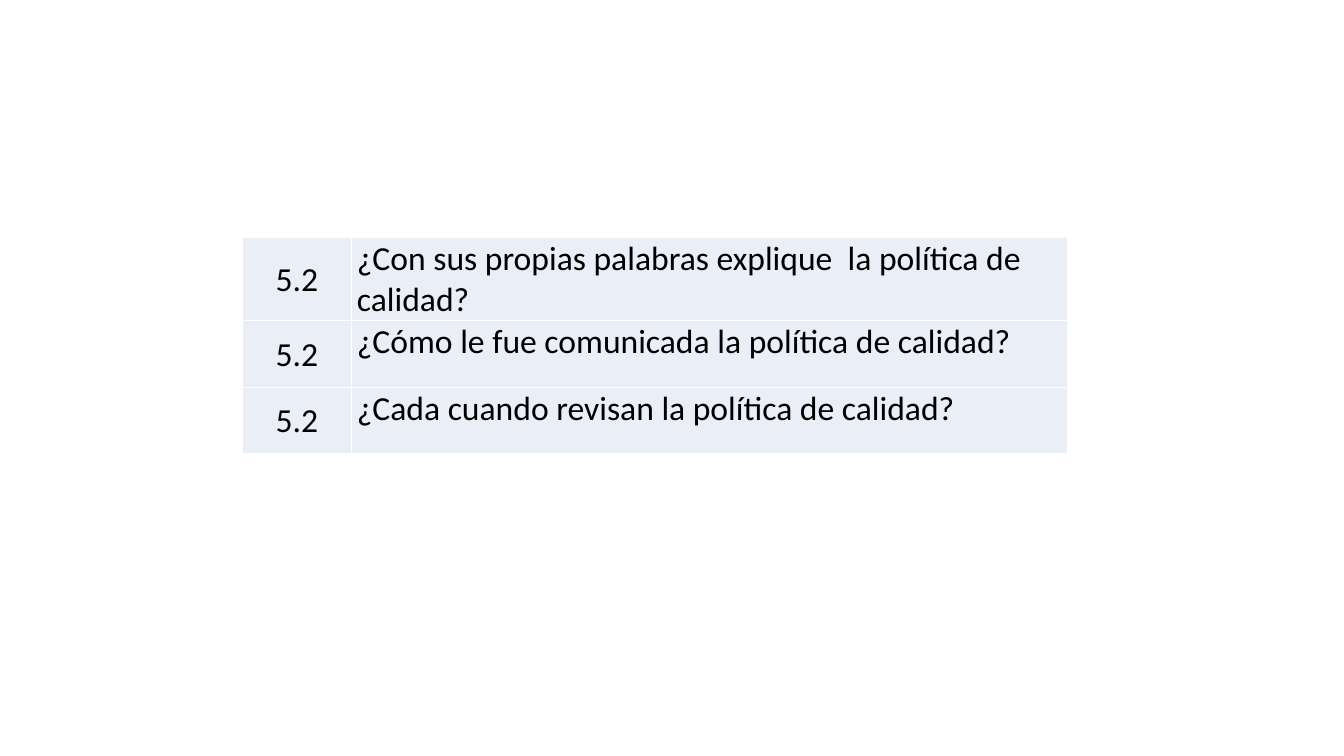
from lxml import etree
from pptx import Presentation
from pptx.dml.color import RGBColor
from pptx.enum.text import MSO_ANCHOR, PP_ALIGN
from pptx.oxml.ns import qn
from pptx.util import Inches, Pt

MIDDLE, TOP = MSO_ANCHOR.MIDDLE, MSO_ANCHOR.TOP
CENTER, LEFT = PP_ALIGN.CENTER, PP_ALIGN.LEFT

# Content
QUESTIONS = [
    ("5.2", "¿Con sus propias palabras explique  la política de calidad?"),
    ("5.2", "¿Cómo le fue comunicada la política de calidad?"),
    ("5.2", "¿Cada cuando revisan la política de calidad?"),
]
COLORS = {"text": "000000", "cell": "EAEFF7", "border": "FFFFFF"}
FONT = {"name": "Calibri", "size": Pt(24)}
MARGINS = {"margin_left": Inches(0.05), "margin_right": Inches(0.05),
           "margin_top": Inches(0.01), "margin_bottom": 0}

# Layout
COLUMNS = [(1.09, CENTER, MIDDLE), (7.1, LEFT, TOP)]  # width, align, anchor
TABLE_LEFT, TABLE_TOP, ROW_HEIGHT = 2.4, 2.36, 0.66


def set_attrs(obj, values):
    for name, value in values.items():
        setattr(obj, name, value)


def add_borders(cell):
    tc_pr = cell._tc.get_or_add_tcPr()
    for side in ("lnL", "lnR", "lnT", "lnB"):
        ln = etree.SubElement(tc_pr, qn(f"a:{side}"), w=str(Pt(1)))
        fill = etree.SubElement(ln, qn("a:solidFill"))
        etree.SubElement(fill, qn("a:srgbClr"), val=COLORS["border"])


def fill_cell(cell, text, align, anchor):
    set_attrs(cell, {**MARGINS, "vertical_anchor": anchor})
    add_borders(cell)
    cell.fill.solid()
    cell.fill.fore_color.rgb = RGBColor.from_string(COLORS["cell"])
    p = cell.text_frame.paragraphs[0]
    p.alignment = align
    r = p.add_run()
    r.text = text
    set_attrs(r.font, FONT)
    r.font.color.rgb = RGBColor.from_string(COLORS["text"])


def main():
    prs = Presentation()
    prs.slide_width, prs.slide_height = Inches(13.33), Inches(7.5)
    s = prs.slides.add_slide(prs.slide_layouts[6])

    # Question table
    width = sum(column[0] for column in COLUMNS)
    table = s.shapes.add_table(
        len(QUESTIONS), len(COLUMNS), Inches(TABLE_LEFT), Inches(TABLE_TOP),
        Inches(width), Inches(ROW_HEIGHT * len(QUESTIONS))).table
    set_attrs(table, {"first_row": False, "horz_banding": False})
    for col, (col_width, align, anchor) in enumerate(COLUMNS):
        table.columns[col].width = Inches(col_width)
        for row, question in enumerate(QUESTIONS):
            fill_cell(table.cell(row, col), question[col], align, anchor)

    prs.save("out.pptx")


if __name__ == "__main__":
    main()
